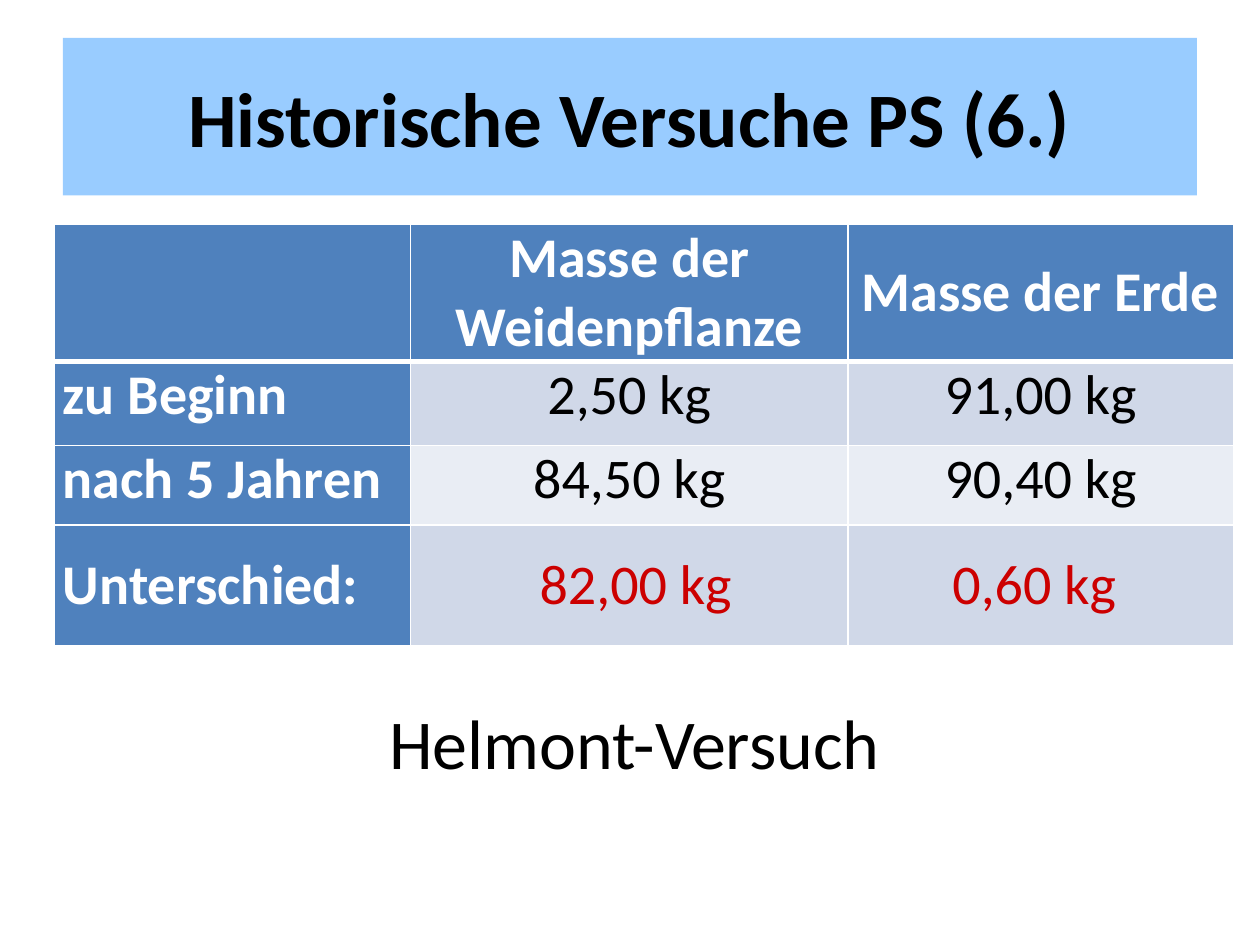
from dataclasses import dataclass

from lxml.etree import SubElement
from pptx import Presentation
from pptx.dml.color import RGBColor as RGB
from pptx.enum.shapes import MSO_SHAPE as Shape
from pptx.enum.text import MSO_ANCHOR as Anchor, MSO_AUTO_SIZE as AutoSize, PP_ALIGN as Align
from pptx.oxml.ns import qn
from pptx.util import Inches, Pt

TITLE = "Historische Versuche PS (6.)"
CAPTION = "Helmont-Versuch"
MASSES = [
    ("", "Masse der Weidenpflanze", "Masse der Erde"),
    ("zu Beginn", "2,50 kg", "91,00 kg"),
    ("nach 5 Jahren", "84,50 kg", "90,40 kg"),
    ("Unterschied:", " 82,00 kg", "0,60 kg "),
]
COLUMN_WIDTHS = (2.83, 3.47, 3.06)
ROW_HEIGHTS = (0.96, 0.67, 0.63, 0.96)
MIDDLE_CELLS = {(0, 2), (3, 0), (3, 1), (3, 2)}


@dataclass(frozen=True)
class Theme:
    font: str = "Calibri"
    banner: str = "99CCFF"
    heading: str = "4F81BD"
    bands: tuple = ("D0D8E8", "E9EDF4")
    dark: str = "000000"
    light: str = "FFFFFF"
    result: str = "CC0000"
    title_size: int = 44
    table_size: int = 32
    caption_size: int = 40


THEME = Theme()


def write(frame, text, size, color, bold=False, align=Align.CENTER):
    paragraph = frame.paragraphs[0]
    paragraph.alignment = align
    run = paragraph.add_run()
    run.text = text
    run.font.name = THEME.font
    run.font.size = Pt(size)
    run.font.bold = bold
    run.font.color.rgb = RGB.from_string(color)


def fill(target, color):
    target.fill.solid()
    target.fill.fore_color.rgb = RGB.from_string(color)


def set_borders(cell, row):
    properties = cell._tc.get_or_add_tcPr()
    heavy_side = {0: "lnB", 1: "lnT"}.get(row)
    for position, side in enumerate(("lnL", "lnR", "lnT", "lnB")):
        border = SubElement(properties, qn(f"a:{side}"), w=str(Pt(3 if side == heavy_side else 1)))
        SubElement(SubElement(border, qn("a:solidFill")), qn("a:srgbClr"), val=THEME.light)
        properties.insert(position, border)


def add_banner(slide):
    banner = slide.shapes.add_shape(Shape.RECTANGLE, Inches(0.5), Inches(0.3), Inches(9), Inches(1.25))
    banner.shadow.inherit = False
    fill(banner, THEME.banner)
    banner.line.fill.background()
    banner.text_frame.word_wrap = True
    banner.text_frame.vertical_anchor = Anchor.MIDDLE
    write(banner.text_frame, TITLE, THEME.title_size, THEME.dark, bold=True)


def fill_cell(cell, text, row, column):
    is_heading = row == 0 or column == 0
    fill(cell, THEME.heading if is_heading else THEME.bands[(row - 1) % 2])
    set_borders(cell, row)
    cell.margin_left = cell.margin_right = Inches(0.07)
    cell.margin_top = cell.margin_bottom = 0
    cell.vertical_anchor = Anchor.MIDDLE if (row, column) in MIDDLE_CELLS else Anchor.TOP
    if text:
        value_color = THEME.result if row == len(MASSES) - 1 else THEME.dark
        write(cell.text_frame, text, THEME.table_size, THEME.light if is_heading else value_color,
              bold=is_heading, align=Align.CENTER if column else Align.LEFT)


def add_mass_table(slide):
    masses = slide.shapes.add_table(
        len(MASSES), len(COLUMN_WIDTHS), Inches(0.43), Inches(1.78),
        Inches(sum(COLUMN_WIDTHS)), Inches(sum(ROW_HEIGHTS))).table
    masses.first_col = True
    for column, width in zip(masses.columns, COLUMN_WIDTHS):
        column.width = Inches(width)
    for row, height in zip(masses.rows, ROW_HEIGHTS):
        row.height = Inches(height)
    for row, texts in enumerate(MASSES):
        for column, text in enumerate(texts):
            fill_cell(masses.cell(row, column), text, row, column)


def add_caption(slide):
    caption = slide.shapes.add_textbox(Inches(0.43), Inches(5.5), Inches(9.21), Inches(0.77)).text_frame
    caption.word_wrap = True
    caption.auto_size = AutoSize.SHAPE_TO_FIT_TEXT
    write(caption, CAPTION, THEME.caption_size, THEME.dark)


def main():
    """Build the slide on the historical willow experiment."""
    deck = Presentation()
    deck.slide_width, deck.slide_height = Inches(10), Inches(7.5)
    slide = deck.slides.add_slide(deck.slide_layouts[6])
    add_banner(slide)
    add_mass_table(slide)
    add_caption(slide)
    deck.save("out.pptx")


if __name__ == "__main__":
    main()
